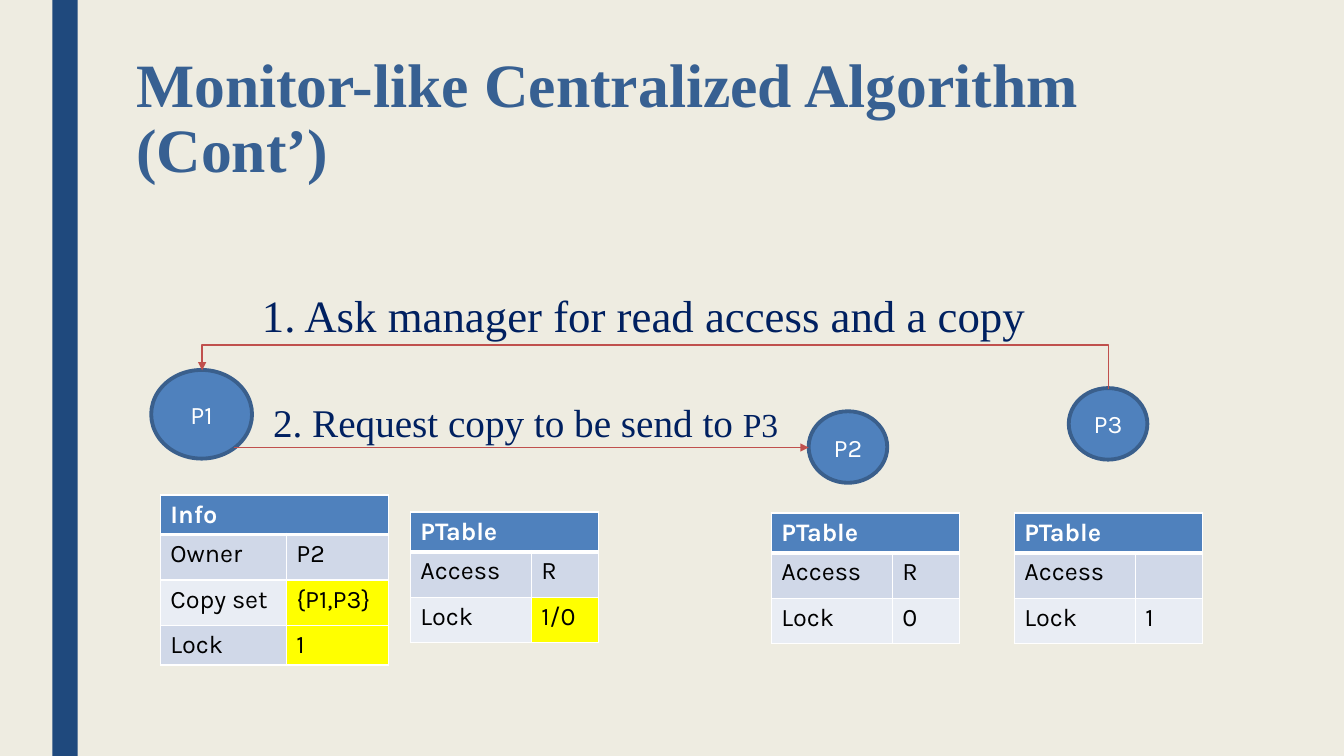
from dataclasses import dataclass

from lxml.etree import SubElement
from pptx import Presentation
from pptx.dml.color import RGBColor
from pptx.enum.shapes import MSO_CONNECTOR, MSO_SHAPE
from pptx.enum.text import MSO_ANCHOR, MSO_AUTO_SIZE, PP_ALIGN
from pptx.oxml import parse_xml
from pptx.oxml.ns import nsdecls, qn
from pptx.util import Inches, Pt


@dataclass(frozen=True)
class Theme:
    background: str = "EEECE1"
    bar: str = "1F497D"
    title: str = "376092"
    label: str = "002060"
    blue: str = "4F81BD"
    outline: str = "3A5F8C"
    arrow: str = "C0504D"
    bands: tuple = ("D0D8E8", "E9EDF4")
    changed: str = "FFFF00"
    white: str = "FFFFFF"
    black: str = "000000"
    serif: str = "Times New Roman"
    sans: str = "Karla"
    title_size: int = 44
    request_size: int = 32
    forward_size: int = 28
    target_size: int = 24
    body_size: int = 18


theme = Theme()


def style(run, font, size, color, bold=False):
    run.font.name = font
    run.font.size = Pt(size)
    run.font.bold = bold
    run.font.color.rgb = RGBColor.from_string(color)


def finish_arrow(arrow):
    arrow.line.color.rgb = RGBColor.from_string(theme.arrow)
    arrow.line.width = Pt(1)
    SubElement(arrow.line._get_or_add_ln(), qn("a:tailEnd"), type="triangle")
    SubElement(arrow._element.spPr, qn("a:effectLst"))


prs = Presentation()
prs.slide_width, prs.slide_height = Inches(13.33), Inches(7.5)
slide = prs.slides.add_slide(prs.slide_layouts[5])
shapes = slide.shapes

# Background and side bar
slide.background.fill.solid()
slide.background.fill.fore_color.rgb = RGBColor.from_string(theme.background)
bar = shapes.add_shape(MSO_SHAPE.RECTANGLE, Inches(0.52), 0, Inches(0.25), Inches(7.5))
bar.shadow.inherit = False
bar.fill.solid()
bar.fill.fore_color.rgb = RGBColor.from_string(theme.bar)
bar.line.fill.background()

# Title
title = shapes.title
title.left, title.top = Inches(1.25), Inches(0.49)
title.width, title.height = Inches(11.49), Inches(1.62)
title.text_frame.text = "Monitor-like Centralized Algorithm (Cont’)"
title.text_frame.auto_size = MSO_AUTO_SIZE.NONE
title.text_frame.vertical_anchor = MSO_ANCHOR.TOP
heading = title.text_frame.paragraphs[0]
heading.alignment = PP_ALIGN.LEFT
heading.line_spacing = 0.89
style(heading.runs[0], theme.serif, theme.title_size, theme.title, bold=True)

# Processes
for name, left, top, width, height in (
    ("P1", 1.5, 3.67, 1, 0.88),
    ("P2", 8.02, 4.08, 0.78, 0.71),
    ("P3", 10.6, 3.85, 0.78, 0.71),
):
    process = shapes.add_shape(MSO_SHAPE.OVAL, Inches(left), Inches(top), Inches(width), Inches(height))
    process.shadow.inherit = False
    process.fill.solid()
    process.fill.fore_color.rgb = RGBColor.from_string(theme.blue)
    process.line.color.rgb = RGBColor.from_string(theme.outline)
    process.line.width = Pt(2.75)
    process.text_frame.text = name
    process.text_frame.vertical_anchor = MSO_ANCHOR.MIDDLE
    process.text_frame.paragraphs[0].alignment = PP_ALIGN.CENTER
    style(process.text_frame.paragraphs[0].runs[0], theme.sans, theme.body_size, theme.white)

# State tables: heading, position, column widths, row heights, rows, changed rows
ptable_columns, ptable_heights = (1.2, 0.67), (0.36, 0.45, 0.45)
for name, left, top, columns, heights, entries, changed in (
    ("Info", 1.59, 4.91, (1.25, 1.01), (0.35, 0.45, 0.45, 0.35),
     (("Owner", "P2"), ("Copy set", "{P1,P3}"), ("Lock", "1")), (2, 3)),
    ("PTable", 4.07, 5.08, ptable_columns, ptable_heights, (("Access", "R"), ("Lock", "1/0")), (2,)),
    ("PTable", 7.65, 5.09, ptable_columns, ptable_heights, (("Access", "R"), ("Lock", "0")), ()),
    ("PTable", 10.06, 5.09, ptable_columns, ptable_heights, (("Access", ""), ("Lock", "1")), ()),
):
    rows = ((name, ""), *entries)
    table = shapes.add_table(len(rows), 2, Inches(left), Inches(top),
                             Inches(sum(columns)), Inches(sum(heights))).table
    for column, width in zip(table.columns, columns):
        column.width = Inches(width)
    for row, height in zip(table.rows, heights):
        row.height = Inches(height)
    table.cell(0, 0).merge(table.cell(0, 1))
    for r, values in enumerate(rows):
        for c, value in enumerate(values):
            cell = table.cell(r, c)
            if r == 0:
                fill = theme.blue
            elif c == 1 and r in changed:
                fill = theme.changed
            else:
                fill = theme.bands[(r - 1) % 2]
            cell.fill.solid()
            cell.fill.fore_color.rgb = RGBColor.from_string(fill)
            if value:
                cell.text_frame.text = value
                style(cell.text_frame.paragraphs[0].runs[0], theme.sans, theme.body_size,
                      theme.black if r else theme.white, bold=r == 0)
            # White borders, heavier under the heading
            for i, side in enumerate("LRTB"):
                heavy = (r == 0 and side == "B") or (r == 1 and side == "T")
                cell._tc.get_or_add_tcPr().insert(i, parse_xml(
                    f'<a:ln{side} {nsdecls("a")} w="{Pt(3 if heavy else 1)}"><a:solidFill>'
                    f'<a:srgbClr val="{theme.white}"/></a:solidFill></a:ln{side}>'))

# Read request from P3 up and over to P1: an elbow turned a quarter
request = shapes.add_connector(MSO_CONNECTOR.ELBOW, Inches(6.41), Inches(8.26), Inches(6.59), Inches(-0.73))
request._element.spPr.find(qn("a:xfrm")).set("rot", str(270 * 60000))
geometry = request._element.spPr.find(qn("a:prstGeom"))
bend = geometry.find(qn("a:avLst"))
if bend is None:
    bend = SubElement(geometry, qn("a:avLst"))
SubElement(bend, qn("a:gd"), name="adj1", fmla="val 240800")
finish_arrow(request)

# Forwarded request from P1 to P2
forward = shapes.add_connector(MSO_CONNECTOR.STRAIGHT, Inches(2.32), Inches(4.44), Inches(8.02), Inches(4.44))
finish_arrow(forward)

# Step labels
for left, top, width, height, wrap, parts in (
    (2.5, 2.81, 7.85, 0.64, False,
     (("1. Ask manager for read access and a copy", theme.request_size),)),
    (2.61, 3.9, 6.11, 0.57, True,
     (("2. Request copy to be send to ", theme.forward_size), ("P3", theme.target_size))),
):
    step = shapes.add_textbox(Inches(left), Inches(top), Inches(width), Inches(height))
    step.text_frame.word_wrap = wrap
    step.text_frame.auto_size = MSO_AUTO_SIZE.SHAPE_TO_FIT_TEXT
    for text, size in parts:
        run = step.text_frame.paragraphs[0].add_run()
        run.text = text
        style(run, theme.serif, size, theme.label)

prs.save("out.pptx")
